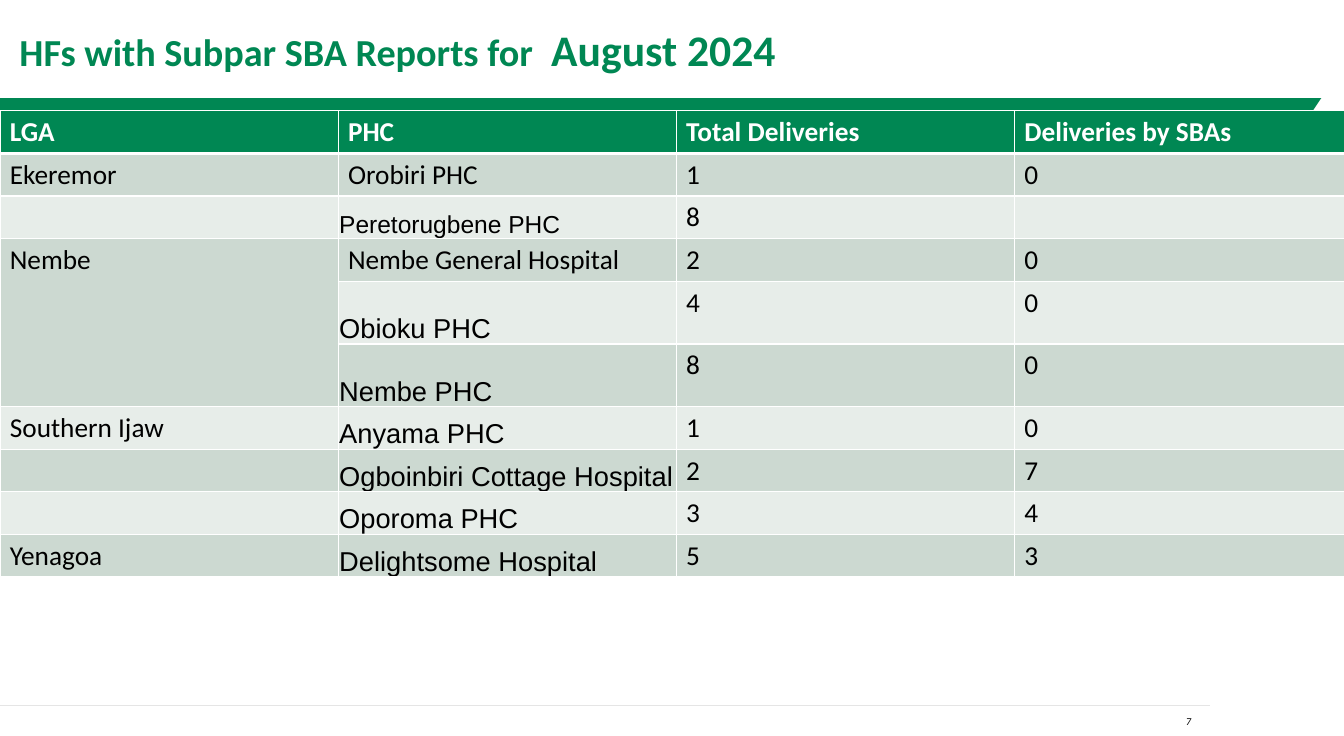
from pptx import Presentation
from pptx.dml.color import RGBColor
from pptx.enum.shapes import MSO_CONNECTOR, MSO_SHAPE
from pptx.enum.text import MSO_ANCHOR, PP_ALIGN
from pptx.oxml.ns import qn
from pptx.util import Inches, Pt
from lxml import etree

RECT, PEAK = MSO_SHAPE.RECTANGLE, MSO_SHAPE.ISOSCELES_TRIANGLE
LINE = MSO_CONNECTOR.STRAIGHT
MIDDLE, BOTTOM, TOP = MSO_ANCHOR.MIDDLE, MSO_ANCHOR.BOTTOM, MSO_ANCHOR.TOP
LEFT, RIGHT = PP_ALIGN.LEFT, PP_ALIGN.RIGHT

WIDE, HIGH = 13.69, 7.5
HUES = {"green": "008753", "white": "FFFFFF", "rule": "E5E5E5",
        "black": "000000", "dark": "CCD9D1", "pale": "E7EDE9"}

TITLE = {"name": "Calibri", "size": Pt(28), "bold": True}
HEAD = {"name": "Calibri", "size": Pt(20), "bold": True}
BODY = {"name": "Calibri", "size": Pt(20), "bold": False}
SITE = BODY | {"name": "Arial"}
PAGE = {"name": "Calibri", "size": Pt(7.7), "italic": True}

ROWS = [
    ("LGA", "PHC", "Total Deliveries", "Deliveries by SBAs"),
    ("Ekeremor", "Orobiri PHC", "1", "0"),
    ("", "Peretorugbene PHC", "8", ""),
    ("Nembe", "Nembe General Hospital", "2", "0"),
    ("", "Obioku PHC", "4", "0"),
    ("", "Nembe PHC", "8", "0"),
    ("Southern Ijaw", "Anyama PHC", "1", "0"),
    ("", "Ogboinbiri Cottage Hospital", "2", "7"),
    ("", "Oporoma PHC", "3", "4"),
    ("Yenagoa", "Delightsome Hospital", "5", "3"),
]
TALL = (4, 5)            # rows with extra height
PLAIN = (0, 1, 3)        # rows whose PHC cell looks like the others
NEMBE = (3, 5)           # first and last row of the merged LGA cell


def hue(name):
    return RGBColor.from_string(HUES[name])


def write(para, text, form, color):
    run = para.add_run()
    run.text = text
    for key, value in form.items():
        setattr(run.font, key, value)
    run.font.color.rgb = hue(color)


def label(slide, box, parts, color, align=LEFT, anchor=TOP, indent=0):
    frame = slide.shapes.add_textbox(*map(Inches, box)).text_frame
    frame.word_wrap = True
    frame.vertical_anchor = anchor
    para = frame.paragraphs[0]
    para.alignment = align
    para._p.get_or_add_pPr().set("marL", str(Inches(indent)))
    for text, form in parts:
        write(para, text, form, color)


def block(slide, kind, box, color):
    shape = slide.shapes.add_shape(kind, *map(Inches, box))
    shape.shadow.inherit = False
    shape.fill.solid()
    shape.fill.fore_color.rgb = hue(color)
    shape.line.fill.background()


def header(slide, x, y, w, h):
    # Green band with a slanted end, then the title
    block(slide, RECT, (x, y + h, w - 0.23, 0.17), "green")
    block(slide, PEAK, (x + w - 0.37, y + h, 0.28, 0.21), "white")
    parts = [("HFs with Subpar SBA Reports for ", TITLE),
             (" August 2024", TITLE | {"size": Pt(32)})]
    label(slide, (x, y, w, h), parts, "green", anchor=MIDDLE, indent=0.1)


def footer(slide, x, y, w):
    # Thin rule and page number
    rule = slide.shapes.add_connector(
        LINE, *map(Inches, (x, y, x + w, y)))
    rule.line.color.rgb = hue("rule")
    rule.line.width = Pt(1)
    etree.SubElement(rule._element.spPr, qn("a:effectLst"))
    label(slide, (x + w - 1.37, y + 0.05, 1.28, 0.24), [("7", PAGE)],
          "black", align=RIGHT)


def edge(cell, side, width):
    line = etree.SubElement(cell._tc.get_or_add_tcPr(), qn("a:ln" + side))
    line.set("w", str(Pt(width)))
    fill = etree.SubElement(line, qn("a:solidFill"))
    etree.SubElement(fill, qn("a:srgbClr")).set("val", HUES["white"])


def style(cell, row, col, text):
    # Borders come before the fill in the cell properties
    for side in "LRTB":
        if side != "T" or row == 0:
            edge(cell, side, 3 if (row, side) == (0, "B") else 1)
    cell.fill.solid()
    band = "dark" if row % 2 else "pale"
    cell.fill.fore_color.rgb = hue(band if row else "green")
    form = BODY if row else HEAD
    if col == 1 and row not in PLAIN:
        form = SITE | {"size": Pt(18)} if row == 2 else SITE
        cell.vertical_anchor = BOTTOM
        cell.margin_left = cell.margin_right = cell.margin_top = Inches(0.01)
        cell.margin_bottom = 0
    if text:
        write(cell.text_frame.paragraphs[0], text, form,
              "black" if row else "white")


def grid(slide, x, y, w, h):
    frame = slide.shapes.add_table(
        len(ROWS), len(ROWS[0]), *map(Inches, (x, y, w, h)))
    table = frame.table
    for row, texts in enumerate(ROWS):
        table.rows[row].height = Inches(0.64 if row in TALL else 0.41)
        for col, text in enumerate(texts):
            style(table.cell(row, col), row, col, text)
    first, last = NEMBE
    table.cell(first, 0).merge(table.cell(last, 0))


def main():
    deck = Presentation()
    deck.slide_width, deck.slide_height = Inches(WIDE), Inches(HIGH)
    slide = deck.slides.add_slide(deck.slide_layouts[6])
    header(slide, 0, 0, WIDE, 1)
    footer(slide, 0, 7.19, WIDE * 0.9)
    grid(slide, 0, 1.13, 13.78, 4.76)
    deck.save("out.pptx")


if __name__ == "__main__":
    main()
